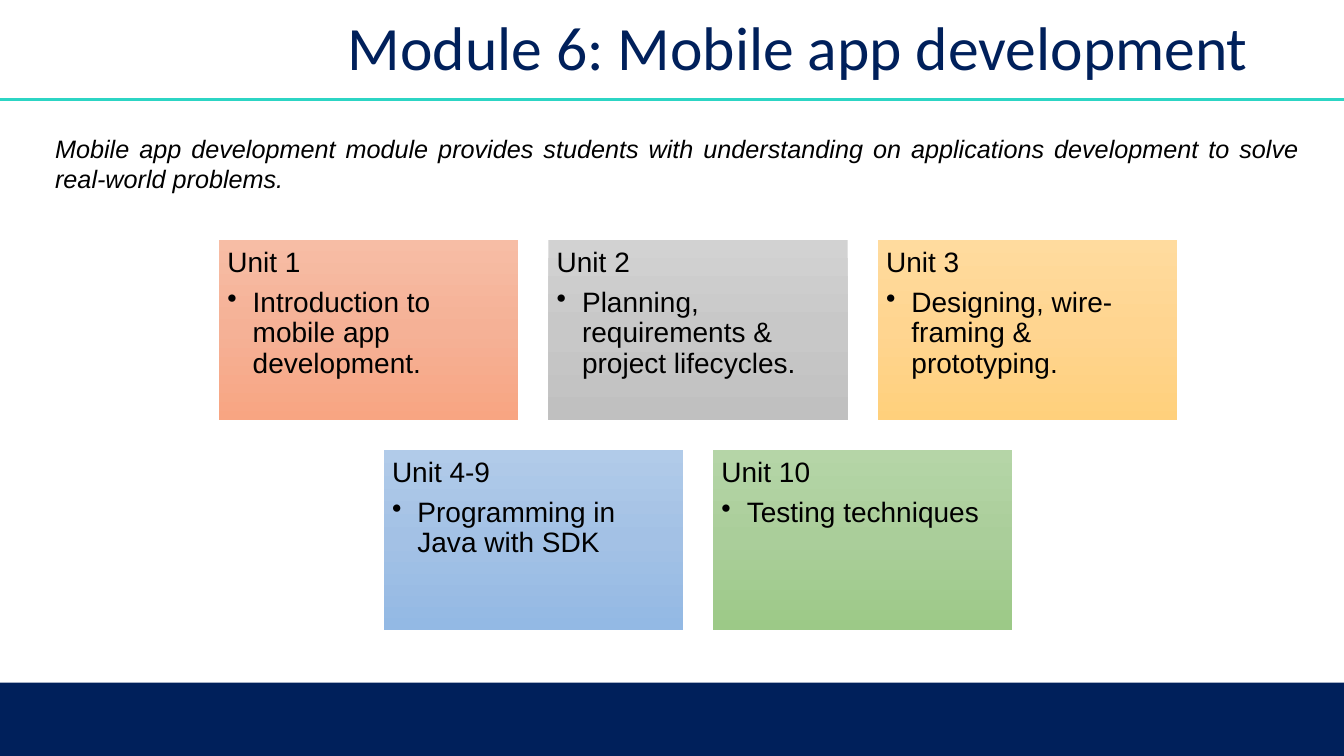
from copy import deepcopy

from lxml.etree import SubElement
from pptx import Presentation
from pptx.dml.color import RGBColor
from pptx.enum.shapes import MSO_CONNECTOR, MSO_SHAPE
from pptx.enum.text import MSO_ANCHOR, MSO_AUTO_SIZE, PP_ALIGN
from pptx.oxml.ns import qn
from pptx.util import Cm, Pt

COLORS = {"navy": "00205B", "teal": "2CD5C4", "text": "000000"}
GRADIENTS = {
    "orange": ("F7BDA5", "F5B196", "F8A582"),
    "grey": ("D2D2D2", "C8C8C8", "C0C0C0"),
    "yellow": ("FFDB9E", "FFD590", "FFD07C"),
    "blue": ("B1CBE9", "A3C1E5", "93B9E4"),
    "green": ("B5D5A7", "AACE9A", "9CC987"),
}
UNIT_ROWS = [
    [
        ("Unit 1", "Introduction to mobile app development.", "orange"),
        ("Unit 2", "Planning, requirements & project lifecycles.", "grey"),
        ("Unit 3", "Designing, wire-framing & prototyping.", "yellow"),
    ],
    [
        ("Unit 4-9", "Programming in Java with SDK", "blue"),
        ("Unit 10", "Testing techniques", "green"),
    ],
]
SUMMARY = ("Mobile app development module provides students with understanding on "
           "applications development to solve real-world problems.")
SLIDE_W, SLIDE_H = Cm(33.87), Cm(19.05)


def rgb(name):
    return RGBColor.from_string(COLORS[name])


def style(paragraph, font_name, size, color, italic=None):
    font = paragraph.font
    font.name, font.size, font.italic = font_name, Pt(size), italic
    font.color.rgb = rgb(color)


def place(part, left, top, width, height):
    part.left, part.top, part.width, part.height = left, top, width, height


def fill_gradient(card, hexes):
    """Fill from top to bottom with evenly spaced colours."""
    card.fill.gradient()
    card.fill.gradient_angle = 270
    stop_list = card._element.spPr.find(".//" + qn("a:gsLst"))
    stop_list.insert(1, deepcopy(stop_list[0]))
    for i, (stop, color) in enumerate(zip(card.fill.gradient_stops, hexes)):
        stop.position = i / (len(hexes) - 1)
        stop.color.rgb = RGBColor.from_string(color)


def add_bullet(paragraph, indent):
    props = paragraph._p.get_or_add_pPr()
    props.set("marL", str(indent))
    props.set("indent", str(-indent))
    SubElement(props, qn("a:buChar")).set("char", "•")


def add_title(slide, left, top, width, height):
    title = slide.shapes.title
    place(title, left, top, width, height)
    frame = title.text_frame
    frame.text = "Module 6: Mobile app development"
    frame.auto_size = MSO_AUTO_SIZE.NONE
    frame.vertical_anchor = MSO_ANCHOR.MIDDLE
    heading = frame.paragraphs[0]
    heading.alignment, heading.line_spacing = PP_ALIGN.RIGHT, 0.9
    style(heading, "Calibri", 44, "navy")


def add_title_rule(slide, top):
    rule = slide.shapes.add_connector(MSO_CONNECTOR.STRAIGHT, 0, top, SLIDE_W, top)
    rule.line.color.rgb = rgb("teal")
    rule.line.width = Pt(2)
    SubElement(rule._element.spPr, qn("a:effectLst"))


def add_footer(slide, top):
    band = slide.shapes.add_shape(MSO_SHAPE.RECTANGLE, 0, top, SLIDE_W, SLIDE_H - top)
    band.shadow.inherit = False
    band.fill.solid()
    band.fill.fore_color.rgb = rgb("navy")
    band.line.fill.background()


def add_summary(slide, left, top, width, height):
    frame = slide.shapes.add_textbox(left, top, width, height).text_frame
    frame.word_wrap = True
    frame.auto_size = MSO_AUTO_SIZE.SHAPE_TO_FIT_TEXT
    frame.text = SUMMARY
    summary = frame.paragraphs[0]
    summary.alignment = PP_ALIGN.JUSTIFY
    style(summary, "Arial", 18, "text", italic=True)


def add_unit_card(slide, left, top, width, height, unit, topic, color):
    card = slide.shapes.add_shape(MSO_SHAPE.RECTANGLE, left, top, width, height)
    card.shadow.inherit = False
    card.line.fill.background()
    fill_gradient(card, GRADIENTS[color])
    frame = card.text_frame
    frame.word_wrap = True
    frame.vertical_anchor = MSO_ANCHOR.TOP
    frame.margin_left = frame.margin_right = Cm(0.21)
    frame.margin_top = frame.margin_bottom = Cm(0.21)
    frame.text = f"{unit}\n{topic}"
    heading, detail = frame.paragraphs
    detail.level = 1
    add_bullet(detail, Cm(0.64))
    for paragraph, gap in ((heading, 7), (detail, 3)):
        paragraph.alignment = PP_ALIGN.LEFT
        paragraph.line_spacing = 0.9
        paragraph.space_after = Pt(gap)
        style(paragraph, "Arial", 20, "text")


def add_unit_grid(slide, left, top, width, height):
    """Lay out the unit cards in rows, each centred in the box."""
    gap = Cm(0.76)
    columns = max(len(row) for row in UNIT_ROWS)
    card_w = (width - gap * (columns - 1)) // columns
    card_h = (height - gap * (len(UNIT_ROWS) - 1)) // len(UNIT_ROWS)
    for r, row in enumerate(UNIT_ROWS):
        row_left = left + (columns - len(row)) * (card_w + gap) // 2
        for c, unit in enumerate(row):
            add_unit_card(slide, row_left + c * (card_w + gap),
                          top + r * (card_h + gap), card_w, card_h, *unit)


def main():
    deck = Presentation()
    deck.slide_width, deck.slide_height = SLIDE_W, SLIDE_H
    slide = deck.slides.add_slide(deck.slide_layouts[5])
    add_title_rule(slide, Cm(2.51))
    add_footer(slide, Cm(17.2))
    add_unit_grid(slide, Cm(5.52), Cm(6.05), Cm(24.14), Cm(9.82))
    add_title(slide, Cm(6.86), Cm(0.36), Cm(24.87), Cm(1.83))
    add_summary(slide, Cm(1.14), Cm(3.23), Cm(31.85), Cm(1.8))
    deck.save("out.pptx")


if __name__ == "__main__":
    main()
